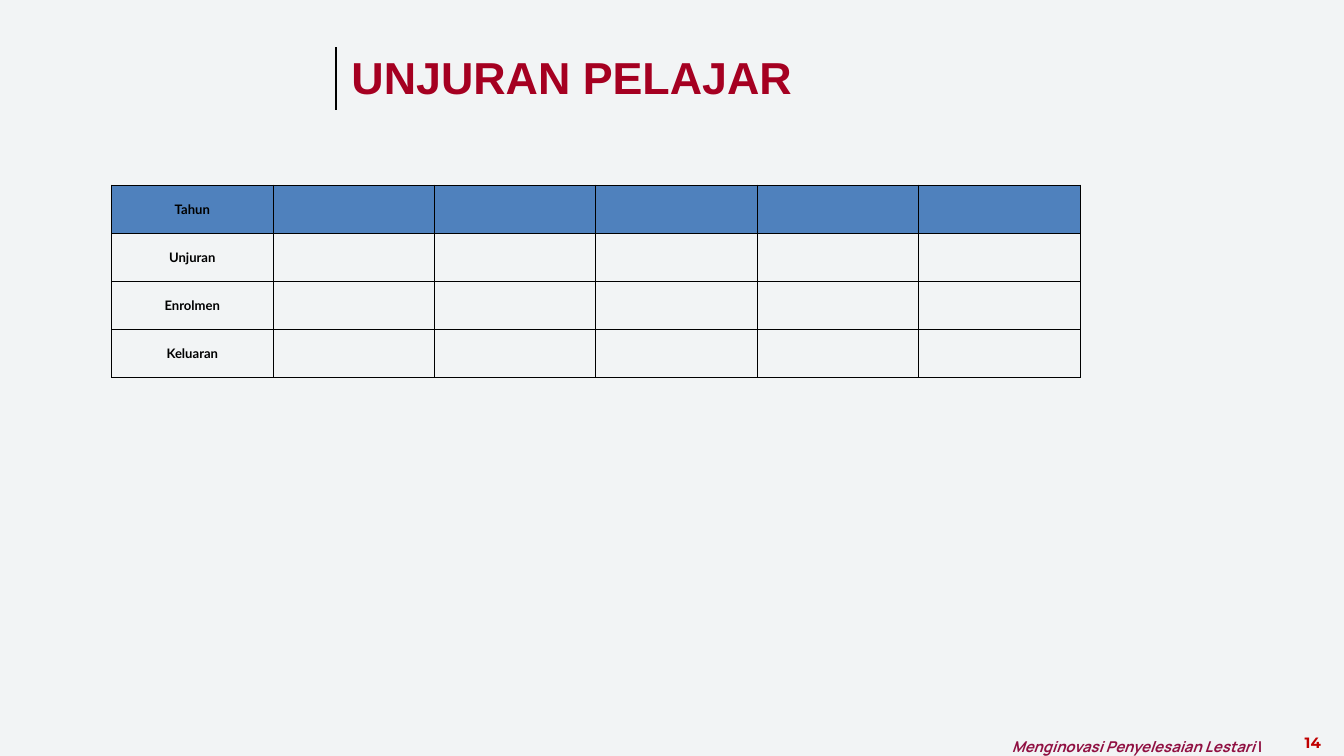
import pptx
import pptx.dml.color
import pptx.enum.shapes
import pptx.enum.text
import pptx.oxml
import pptx.oxml.ns
import pptx.util
from pptx.util import Cm

RGBColor = pptx.dml.color.RGBColor
BACKGROUND = RGBColor(0xF2, 0xF4, 0xF5)
BLACK = RGBColor(0, 0, 0)
CRIMSON = RGBColor(0xA5, 0x00, 0x21)
PLUM = RGBColor(0x90, 0x10, 0x42)
RED = RGBColor(0xC0, 0x00, 0x00)
BLUE = RGBColor(0x4F, 0x81, 0xBD)

ALIGN = pptx.enum.text.PP_ALIGN
ANCHOR = pptx.enum.text.MSO_ANCHOR
YEAR_COLUMNS = 5
ROW_LABELS = ["Tahun", "Unjuran", "Enrolmen", "Keluaran"]


class SlideBuilder:
    """Hold the text styles and the current slide, and add elements to it."""

    styles = {
        "title": {"name": "Arial", "size": pptx.util.Pt(48), "bold": True, "color": CRIMSON},
        "tagline": {"name": "Manrope", "size": pptx.util.Pt(16), "bold": True, "italic": True, "color": PLUM},
        "number": {"name": "Montserrat", "size": pptx.util.Pt(16), "bold": True, "color": RED},
        "label": {"name": "Lato", "size": pptx.util.Pt(14), "bold": True, "color": BLACK},
    }

    def __init__(self, deck):
        self.page = deck.slides.add_slide(deck.slide_layouts[5])
        fill = self.page.background.fill
        fill.solid()
        fill.fore_color.rgb = BACKGROUND

    def add_span(self, para, text, style, **changes):
        span = para.add_run()
        span.text = text
        for key, value in {**self.styles[style], **changes}.items():
            if key == "color":
                span.font.color.rgb = value
            else:
                setattr(span.font, key, value)

    def title(self, text, left, top, width, height):
        box = self.page.shapes.title
        frame = box.text_frame
        layout = {"left": left, "top": top, "width": width, "height": height}
        settings = {
            "vertical_anchor": ANCHOR.TOP,
            "word_wrap": True,
            "auto_size": pptx.enum.text.MSO_AUTO_SIZE.NONE,
        }
        for target, values in ((box, layout), (frame, settings)):
            for key, value in values.items():
                setattr(target, key, value)
        para = frame.paragraphs[0]
        para.alignment = ALIGN.LEFT
        self.add_span(para, text, "title")

    def text(self, spans, style, place, margin=None, **paragraph_format):
        frame = self.page.shapes.add_textbox(*place).text_frame
        frame.word_wrap = True
        if margin is not None:
            for side in ("left", "top", "right", "bottom"):
                setattr(frame, f"margin_{side}", margin)
        para = frame.paragraphs[0]
        for key, value in paragraph_format.items():
            setattr(para, key, value)
        for content, changes in spans:
            self.add_span(para, content, style, **changes)

    def rule(self, left, top, height):
        line = self.page.shapes.add_connector(
            pptx.enum.shapes.MSO_CONNECTOR.STRAIGHT, left, top, left, top + height
        )
        line.line.color.rgb = BLACK
        line.line.width = pptx.util.Pt(3)
        line.element.spPr.append(pptx.oxml.parse_xml(f"<a:effectLst {pptx.oxml.ns.nsdecls('a')}/>"))

    def borders(self, cell):
        properties = cell._tc.get_or_add_tcPr()
        for index, side in enumerate(("lnL", "lnR", "lnT", "lnB")):
            properties.insert(index, pptx.oxml.parse_xml(
                f'<a:{side} {pptx.oxml.ns.nsdecls("a")} w="12700"><a:solidFill>'
                f'<a:srgbClr val="{BLACK}"/></a:solidFill></a:{side}>'
            ))

    def table(self, labels, columns, left, top, column_width, row_height):
        table = self.page.shapes.add_table(
            len(labels), columns, left, top, column_width * columns, row_height * len(labels)
        ).table
        table.first_row = table.horz_banding = False
        for column in table.columns:
            column.width = column_width
        for index, label in enumerate(labels):
            table.rows[index].height = row_height
            for cell in table.rows[index].cells:
                if index == 0:
                    cell.fill.solid()
                    cell.fill.fore_color.rgb = BLUE
                else:
                    cell.fill.background()
                self.borders(cell)
            heading = table.cell(index, 0)
            heading.vertical_anchor = ANCHOR.MIDDLE
            para = heading.text_frame.paragraphs[0]
            para.alignment = ALIGN.CENTER
            self.add_span(para, label, "label")


def main():
    deck = pptx.Presentation()
    deck.slide_width, deck.slide_height = Cm(50.8), Cm(28.58)
    slide = SlideBuilder(deck)
    slide.text(
        [("Menginovasi Penyelesaian Lestari ", {}), ("|", {"italic": False})],
        "tagline", (Cm(38.25), Cm(27.61), Cm(10.67), Cm(0.97)), margin=0, line_spacing=1.4,
    )
    slide.rule(Cm(12.7), Cm(1.78), Cm(2.39))
    slide.text(
        [("14", {})], "number", (Cm(48.44), Cm(27.61), Cm(2.36), Cm(0.94)), alignment=ALIGN.CENTER
    )
    slide.title("UNJURAN PELAJAR", Cm(13.03), Cm(1.75), Cm(32.46), Cm(3.18))
    slide.table(ROW_LABELS, 1 + YEAR_COLUMNS, Cm(4.22), Cm(6.99), Cm(6.1), Cm(1.82))
    deck.save("out.pptx")


if __name__ == "__main__":
    main()
